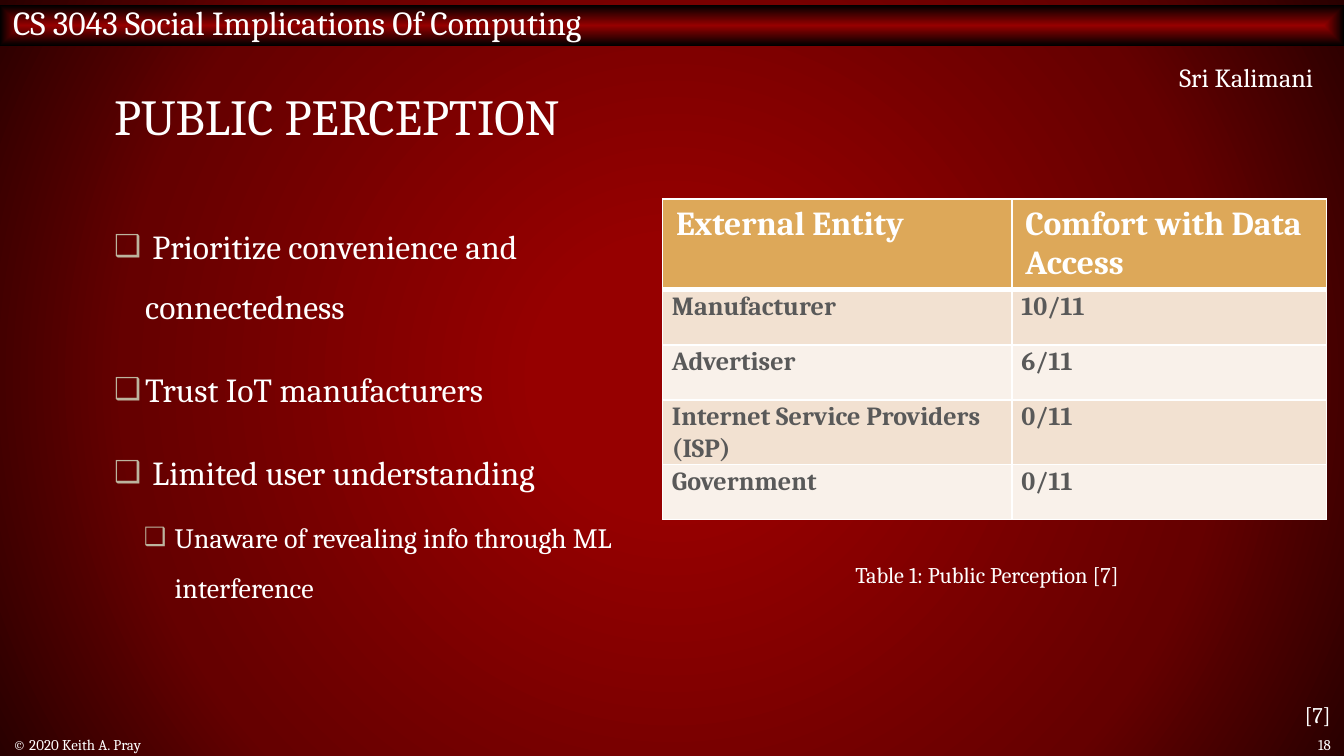
import pptx
import pptx.dml.color
import pptx.enum.shapes
import pptx.enum.text
import pptx.oxml
import pptx.oxml.ns
import pptx.util
from pptx.util import Inches

FONT = "Cambria"
COLORS = {
    "white": "FFFFFF",
    "red": "960000",
    "dark_red": "650000",
    "maroon": "290000",
    "black": "000000",
    "bullet": "BCB49E",
    "header": "DDA859",
    "odd_row": "F2E1D1",
    "even_row": "F9F1EA",
    "cell_text": "595959",
}
ALIGN = pptx.enum.text.PP_ALIGN
ANCHOR = pptx.enum.text.MSO_ANCHOR
ROWS = [
    ("External Entity", "Comfort with Data Access"),
    ("Manufacturer", "10/11"),
    ("Advertiser", "6/11"),
    ("Internet Service Providers (ISP)", "0/11"),
    ("Government", "0/11"),
]
BULLETS = [
    (0, " Prioritize convenience and connectedness"),
    (0, "Trust IoT manufacturers"),
    (0, " Limited user understanding"),
    (1, "Unaware of revealing info through ML interference"),
]


def rgb(name):
    return pptx.dml.color.RGBColor.from_string(COLORS[name])


def drawing_xml(tag, attributes="", content=""):
    namespace = pptx.oxml.ns.nsdecls("a")
    return pptx.oxml.parse_xml(f"<a:{tag} {namespace} {attributes}>{content}</a:{tag}>")


def color_xml(name):
    return f'<a:srgbClr val="{COLORS[name]}"/>'


def format_runs(paragraph, size, color="white", bold=False):
    for run in paragraph.runs:
        run.font.name = FONT
        run.font.size = pptx.util.Pt(size)
        run.font.bold = bold
        run.font.color.rgb = rgb(color)


def place(shape, left, top, width, height):
    shape.left, shape.top = Inches(left), Inches(top)
    shape.width, shape.height = Inches(width), Inches(height)


def apply_gradient(fill, element, shape_path, stops):
    fill.solid()
    solid = element.xpath(".//a:solidFill")[0]
    stop_xml = "".join(
        f'<a:gs pos="{position * 1000}">{color_xml(name)}</a:gs>' for position, name in stops
    )
    center = '<a:fillToRect l="50000" t="50000" r="50000" b="50000"/>'
    content = f'<a:gsLst>{stop_xml}</a:gsLst><a:path path="{shape_path}">{center}</a:path>'
    solid.getparent().replace(solid, drawing_xml("gradFill", 'rotWithShape="1"', content))


def add_banner(slide, text):
    rectangle = pptx.enum.shapes.MSO_SHAPE.RECTANGLE
    banner = slide.shapes.add_shape(rectangle, 0, Inches(0.04), Inches(10), Inches(0.3))
    banner.shadow.inherit = False
    banner.line.fill.background()
    apply_gradient(banner.fill, banner.element, "shape", [(0, "red"), (100, "black")])
    frame = banner.text_frame
    frame.margin_top = 0
    frame.vertical_anchor = ANCHOR.MIDDLE
    frame.text = text
    frame.paragraphs[0].alignment = ALIGN.LEFT
    format_runs(frame.paragraphs[0], 18)


def add_label(slide, text, box, size, alignment, anchor=ANCHOR.TOP, line_spacing=None):
    label = slide.shapes.add_textbox(*map(Inches, box))
    frame = label.text_frame
    frame.word_wrap = True
    frame.vertical_anchor = anchor
    frame.text = text
    paragraph = frame.paragraphs[0]
    paragraph.alignment = alignment
    paragraph.line_spacing = line_spacing
    format_runs(paragraph, size)


def fill_title(title, text):
    place(title, 0.75, 0.4, 8.5, 1)
    frame = title.text_frame
    frame.auto_size = pptx.enum.text.MSO_AUTO_SIZE.NONE
    frame.vertical_anchor = ANCHOR.MIDDLE
    frame.text = text
    paragraph = frame.paragraphs[0]
    paragraph.alignment = ALIGN.LEFT
    paragraph.line_spacing = 0.8
    format_runs(paragraph, 27)


def add_bullet(paragraph, level):
    properties = paragraph._p.get_or_add_pPr()
    properties.set("marL", str(Inches((0.23, 0.45)[level])))
    properties.set("indent", str(Inches(-0.23)))
    properties.append(drawing_xml("buClr", content=color_xml("bullet")))
    properties.append(drawing_xml("buSzPct", 'val="90000"'))
    properties.append(drawing_xml("buChar", 'char="❑"'))


def fill_body(body):
    place(body, 0.75, 1.48, 4.08, 3.67)
    frame = body.text_frame
    frame.auto_size = pptx.enum.text.MSO_AUTO_SIZE.NONE
    frame.text = "\n".join(text for _, text in BULLETS)
    for index, (paragraph, (level, _)) in enumerate(zip(frame.paragraphs, BULLETS)):
        add_bullet(paragraph, level)
        paragraph.level = level
        paragraph.line_spacing = 1.5
        paragraph.space_before = pptx.util.Pt((12, 6)[level] if index else 0)
        format_runs(paragraph, (18, 15)[level])


def set_borders(cell, top, bottom):
    properties = cell._tc.get_or_add_tcPr()
    content = f"<a:solidFill>{color_xml('white')}</a:solidFill>"
    widths = {"lnL": 1, "lnR": 1, "lnT": top, "lnB": bottom}
    for index, (tag, width) in enumerate(widths.items()):
        properties.insert(index, drawing_xml(tag, f'w="{pptx.util.Pt(width)}"', content))


def format_cell(cell, text, row):
    cell.text = text
    paragraph = cell.text_frame.paragraphs[0]
    cell.fill.solid()
    if row == 0:
        cell.fill.fore_color.rgb = rgb("header")
        format_runs(paragraph, 18, bold=True)
    else:
        cell.fill.fore_color.rgb = rgb("odd_row" if row % 2 else "even_row")
        cell.margin_left = cell.margin_right = Inches(0.07)
        cell.margin_top = cell.margin_bottom = 0
        paragraph.line_spacing = 1.07
        format_runs(paragraph, 14, "cell_text", bold=True)
    set_borders(cell, 3 if row == 1 else 1, 3 if row == 0 else 1)


def add_comfort_table(slide):
    box = map(Inches, (4.93, 1.48, 4.94, 2.05))
    table = slide.shapes.add_table(len(ROWS), 2, *box).table
    for column, width in zip(table.columns, (2.6, 2.34)):
        column.width = Inches(width)
    for row, texts in enumerate(ROWS):
        table.rows[row].height = Inches(0.41)
        for column, text in enumerate(texts):
            format_cell(table.cell(row, column), text, row)


def main():
    presentation = pptx.Presentation()
    presentation.slide_width = Inches(10)
    presentation.slide_height = Inches(10 * 9 / 16)
    slide = presentation.slides.add_slide(presentation.slide_layouts[1])
    stops = [(17, "red"), (71, "dark_red"), (100, "maroon")]
    apply_gradient(slide.background.fill, slide.element, "circle", stops)
    add_banner(slide, "CS 3043 Social Implications Of Computing")
    fill_title(slide.shapes.title, "PUBLIC PERCEPTION")
    add_comfort_table(slide)
    add_label(slide, "© 2020 Keith A. Pray", (0, 5.46, 6.08, 0.16), 8, ALIGN.LEFT, ANCHOR.MIDDLE)
    add_label(slide, "18", (9.32, 5.46, 0.68, 0.16), 8, ALIGN.RIGHT, ANCHOR.MIDDLE)
    add_label(slide, "Sri Kalimani", (7.49, 0.41, 2.38, 0.34), 14, ALIGN.RIGHT)
    add_label(slide, "[7]", (0, 5.17, 10, 0.3), 12, ALIGN.RIGHT)
    fill_body(slide.placeholders[1])
    caption = "Table 1: Public Perception [7]"
    add_label(slide, caption, (5, 4.15, 4.69, 0.28), 12, ALIGN.CENTER, line_spacing=0.9)
    presentation.save("out.pptx")


if __name__ == "__main__":
    main()
